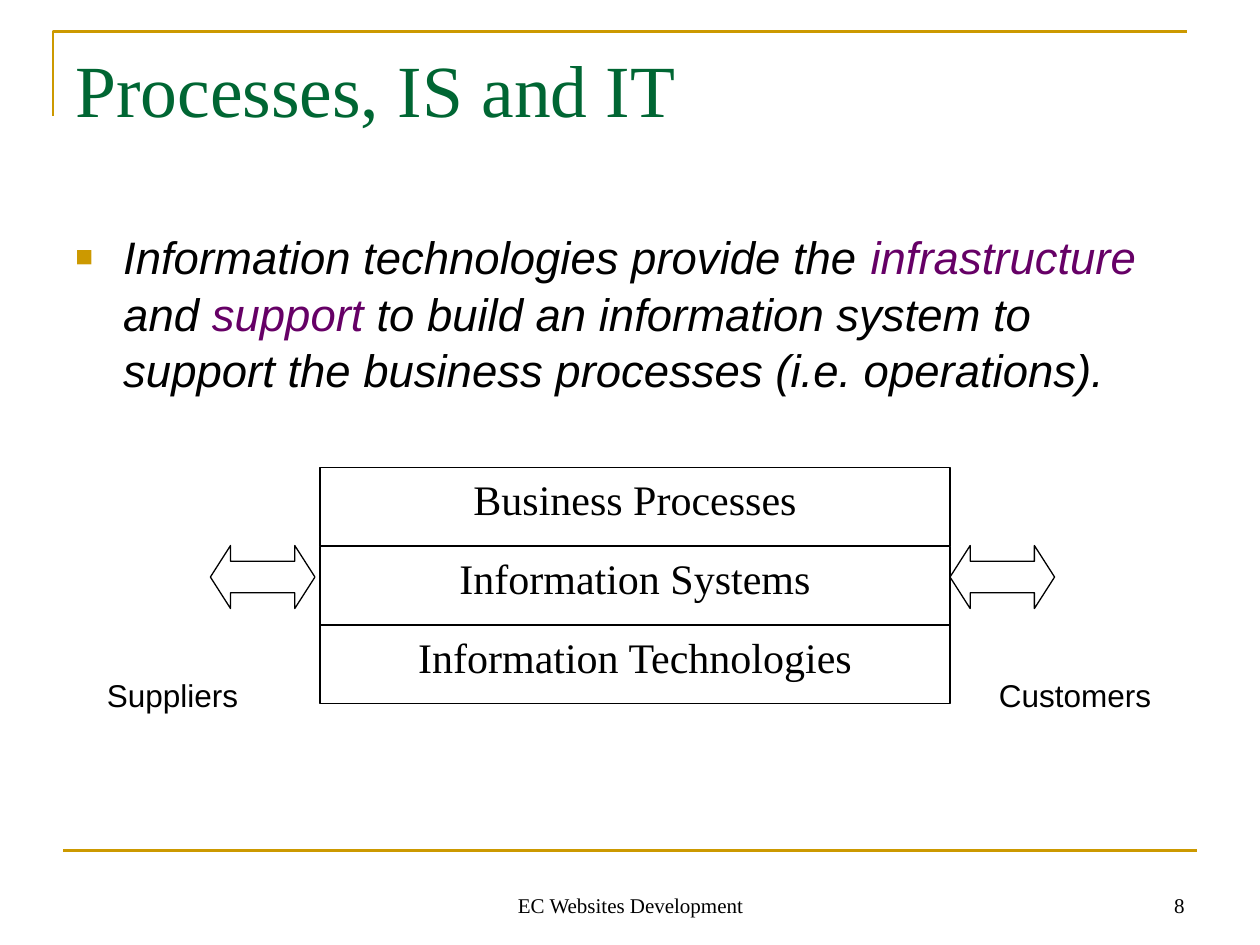
import pptx
import pptx.dml.color
import pptx.enum.shapes
import pptx.enum.text
import pptx.util
from lxml import etree
from pptx.util import Inches

SHAPES = pptx.enum.shapes.MSO_SHAPE
ALIGN = pptx.enum.text.PP_ALIGN
ANCHOR = pptx.enum.text.MSO_ANCHOR
BLACK, WHITE, GOLD, GREEN, PURPLE = "000000", "FFFFFF", "CC9900", "006633", "660066"
SERIF, SANS = "Times New Roman", "Arial"


def color(value):
    return pptx.dml.color.RGBColor.from_string(value)


def write(box, spans, formats, align=ALIGN.LEFT, anchor=ANCHOR.TOP):
    """Fill a box with one paragraph of (text, colour) spans."""
    frame = box.text_frame
    frame.word_wrap = True
    frame.vertical_anchor = anchor
    para = frame.paragraphs[0]
    para.alignment = align
    for text, text_color in spans:
        span = para.add_run()
        span.text = text
        span.font.color.rgb = color(text_color)
        for name, value in formats.items():
            setattr(span.font, name, value)
    return para


deck = pptx.Presentation()
deck.slide_width, deck.slide_height = Inches(10), Inches(7.5)
page = deck.slides.add_slide(deck.slide_layouts[6])

# Gold corner above the title
builder = page.shapes.build_freeform(Inches(0.42), Inches(0.92))
builder.add_line_segments(
    [(Inches(0.42), Inches(0.25)), (Inches(9.42), Inches(0.25))], close=False)
corner = builder.convert_to_shape()
corner.fill.background()
corner.shadow.inherit = False

# Gold rule above the footer
rule = page.shapes.add_connector(
    pptx.enum.shapes.MSO_CONNECTOR.STRAIGHT,
    Inches(0.5), Inches(6.75), Inches(9.5), Inches(6.75))
etree.SubElement(rule._element.spPr, pptx.oxml.ns.qn("a:effectLst"))
for stroke in (corner, rule):
    stroke.line.color.rgb = color(GOLD)
    stroke.line.width = pptx.util.Pt(1.5)

# Title, footer, page number and partner labels
small = {"size": pptx.util.Pt(12), "name": SERIF}
label = {"size": pptx.util.Pt(18), "name": SANS}
heading = {"size": pptx.util.Pt(42), "name": SERIF}
texts = [
    ("EC Websites Development", 3.42, 6.83, 3.17, 0.5, small, BLACK, ALIGN.CENTER, ANCHOR.BOTTOM),
    ("8", 7.17, 6.83, 2.33, 0.5, small, BLACK, ALIGN.RIGHT, ANCHOR.BOTTOM),
    ("Processes, IS and IT", 0.5, 0.3, 9, 1.25, heading, GREEN, ALIGN.LEFT, ANCHOR.TOP),
    ("Customers", 7.83, 5.32, 1.46, 0.4, label, BLACK, ALIGN.LEFT, ANCHOR.TOP),
    ("Suppliers", 0.75, 5.32, 1.46, 0.4, label, BLACK, ALIGN.LEFT, ANCHOR.TOP),
]
for text, left, top, width, height, formats, text_color, align, anchor in texts:
    box = page.shapes.add_textbox(Inches(left), Inches(top), Inches(width), Inches(height))
    write(box, [(text, text_color)], formats, align, anchor)

# Bulleted statement
statement = page.shapes.add_textbox(Inches(0.5), Inches(1.75), Inches(9), Inches(1.42))
para = write(
    statement,
    [("Information technologies provide the ", BLACK),
     ("infrastructure", PURPLE),
     (" and ", BLACK),
     ("support", PURPLE),
     (" to build an information system to support the business processes"
      " (i.e. operations).", BLACK)],
    {"size": pptx.util.Pt(26), "name": SANS, "italic": True})
para.line_spacing = 1.04
para.space_before = pptx.util.Pt(5.2)
properties = para._p.get_or_add_pPr()
properties.set("marL", str(Inches(0.38)))
properties.set("indent", str(Inches(-0.38)))
bullet_color = etree.SubElement(properties, pptx.oxml.ns.qn("a:buClr"))
etree.SubElement(bullet_color, pptx.oxml.ns.qn("a:srgbClr"), val=GOLD)
etree.SubElement(properties, pptx.oxml.ns.qn("a:buSzPct"), val="65000")
etree.SubElement(properties, pptx.oxml.ns.qn("a:buFont"), typeface=SANS)
etree.SubElement(properties, pptx.oxml.ns.qn("a:buChar"), char="■")

# Stack of three layers, with an exchange arrow on each side
layers = ["Business Processes", "Information Systems", "Information Technologies"]
layer_height = 0.625
blocks = [(SHAPES.RECTANGLE, 2.54, 3.71 + row * layer_height, 5, layer_height, text)
          for row, text in enumerate(layers)]
blocks += [(SHAPES.LEFT_RIGHT_ARROW, left, 4.33, 0.83, 0.5, None) for left in (7.54, 1.67)]
for kind, left, top, width, height, text in blocks:
    block = page.shapes.add_shape(
        kind, Inches(left), Inches(top), Inches(width), Inches(height))
    block.shadow.inherit = False
    block.fill.solid()
    block.fill.fore_color.rgb = color(WHITE)
    block.line.color.rgb = color(BLACK)
    block.line.width = pptx.util.Pt(0.75)
    if text:
        write(block, [(text, BLACK)], {"size": pptx.util.Pt(24), "name": SERIF}, ALIGN.CENTER)
    else:
        block.adjustments[0] = 0.5
        block.adjustments[1] = 0.32

deck.save("out.pptx")
